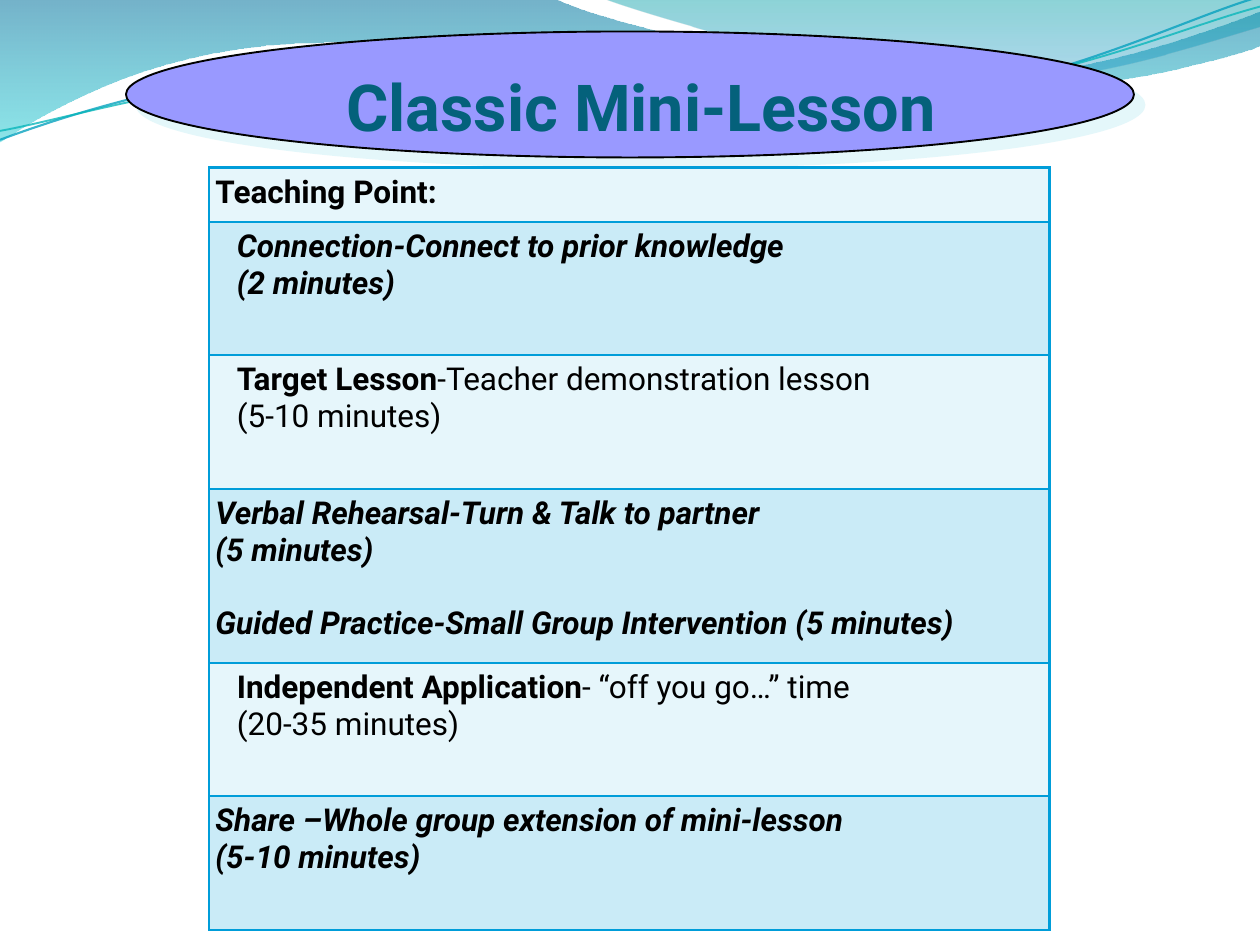
from typing import NamedTuple

from pptx import Presentation
from pptx.dml.color import RGBColor
from pptx.enum.shapes import MSO_SHAPE as Preset
from pptx.enum.text import MSO_ANCHOR as Anchor
from pptx.oxml import parse_xml
from pptx.oxml.ns import nsdecls, qn
from pptx.util import Emu, Inches, Pt

# The slide is a grid of 10 columns by 7.5 rows of square cells
SLIDE_WIDTH, SLIDE_HEIGHT = Inches(10), Inches(7.5)
CELL = SLIDE_WIDTH // 10

FONT = "Roboto"
BLACK = RGBColor(0x00, 0x00, 0x00)
TITLE_TEAL = RGBColor(0x04, 0x61, 0x7B)
OVAL_VIOLET = RGBColor(0x99, 0x99, 0xFF)
SHADOW_AQUA = RGBColor(0xDB, 0xF5, 0xF9)
BORDER_BLUE = RGBColor(0x00, 0x9D, 0xD9)
ROW_FILLS = (RGBColor(0xE6, 0xF6, 0xFB), RGBColor(0xCA, 0xEB, 0xF7))
DEEP_BLUE = RGBColor(0x00, 0x73, 0x9E)
TURQUOISE = RGBColor(0x00, 0xC5, 0xCE)
SEA_GREEN = RGBColor(0x00, 0x9F, 0xA6)
SKY_BLUE = RGBColor(0x00, 0x8A, 0xBE)
STRAND_BLUE = RGBColor(0x05, 0xA0, 0xBE)
STRAND_GREEN = RGBColor(0x08, 0xB6, 0xBA)

Point = tuple[float, float]
Segments = tuple[tuple[Point, ...], ...]  # one point: line, three: curve


class Stop(NamedTuple):
    position: int
    color: RGBColor
    opacity: int


class Wave(NamedTuple):
    start: Point
    segments: Segments
    stops: tuple[Stop, ...]


class Strand(NamedTuple):
    start: Point
    segments: Segments
    color: RGBColor
    width: float


class Words(NamedTuple):
    text: str
    bold: bool = True
    italic: bool = False


class Step(NamedTuple):
    height: float
    lines: tuple[tuple[Words, ...], ...]
    indent: float = 0
    gap_before_last: float = 0


WAVES = (
    Wave((0, -0.01), (
        ((4.4, -0.01),),
        ((4.76, 0.17), (6.64, 0.63), (7.58, 0.63)),
        ((8.53, 0.63), (9.58, 0.26), (10, 0.09)),
        ((10.01, 0.36),),
        ((9.83, 0.44), (8.7, 0.76), (7.46, 0.75)),
        ((6.22, 0.75), (3.82, 0.28), (2.57, 0.34)),
        ((1.29, 0.35), (0.46, 0.83), (-0.01, 1.13)),
    ), (Stop(0, DEEP_BLUE, 55), Stop(100, TURQUOISE, 45))),
    Wave((4.79, -0.01), (
        ((5.09, 0.11), (6.82, 0.62), (7.69, 0.65)),
        ((8.56, 0.69), (9.61, 0.32), (10, 0.21)),
        ((10, 0),),
    ), (Stop(0, SEA_GREEN, 45), Stop(80, SKY_BLUE, 33), Stop(100, SKY_BLUE, 30))),
)
STRANDS = (
    Strand((0, 1.11), (
        ((0.48, 0.93), (1.58, 0.57), (2.77, 0.51)),
        ((3.96, 0.46), (5.93, 0.88), (7.13, 0.79)),
        ((8.33, 0.7), (9.39, 0.15), (9.98, -0.02)),
    ), STRAND_BLUE, 1.21),
    Strand((-0.01, 1.04), (
        ((0.47, 0.96), (1.63, 0.6), (2.83, 0.56)),
        ((4.02, 0.51), (5.98, 0.84), (7.17, 0.75)),
        ((8.37, 0.67), (9.42, 0.2), (10.01, 0.05)),
    ), STRAND_GREEN, 1.07),
)


def strong(text: str) -> tuple[Words, ...]:
    return (Words(text, italic=True),)


STEPS = (
    Step(0.43, ((Words("Teaching Point:"),),)),
    Step(1.06, (strong("Connection-Connect to prior knowledge"),
                strong("(2 minutes)")), indent=0.17),
    Step(1.06, ((Words("Target Lesson"), Words("-Teacher demonstration lesson", False)),
                (Words("(5-10 minutes)", False),)), indent=0.17),
    Step(1.38, (strong("Verbal Rehearsal-Turn & Talk to partner"),
                strong("(5 minutes)"),
                strong("Guided Practice-Small Group Intervention (5 minutes)")),
         gap_before_last=21),
    Step(1.06, ((Words("Independent Application"), Words("- “off you go…” time", False)),
                (Words("(20-35 minutes)", False),)), indent=0.17),
    Step(1.06, (strong("Share –Whole group extension of mini-lesson"),
                strong("(5-10 minutes)"))),
)


def cells(*lengths: float) -> list[Emu]:
    return [Emu(round(length * CELL)) for length in lengths]


def color_xml(color: RGBColor, opacity: int = 100) -> str:
    return f'<a:srgbClr val="{color}"><a:alpha val="{opacity * 1000}"/></a:srgbClr>'


def draw_outline(slide, part: Wave | Strand, close: bool):
    """Lay straight steps through all points, then bend each group of three."""
    points = [cells(*point) for segment in part.segments for point in segment]
    builder = slide.shapes.build_freeform(*cells(*part.start))
    builder.add_line_segments(points, close=close)
    shape = builder.convert_to_shape()
    shape.shadow.inherit = False
    lines = iter(shape._element.spPr.findall(".//" + qn("a:lnTo")))
    for segment in part.segments:
        group = [next(lines) for _ in segment]
        if len(group) == 3:
            curve = parse_xml(f'<a:cubicBezTo {nsdecls("a")}/>')
            group[0].addprevious(curve)
            for line in group:
                curve.append(line[0])
                line.getparent().remove(line)
    return shape


def draw_wave(slide, wave: Wave) -> None:
    shape = draw_outline(slide, wave, close=True)
    shape.line.fill.background()
    shape.fill.gradient()
    properties = shape._element.spPr
    stops = "".join(f'<a:gs pos="{stop.position * 1000}">'
                    f'{color_xml(stop.color, stop.opacity)}</a:gs>' for stop in wave.stops)
    properties.replace(properties.find(qn("a:gradFill")), parse_xml(
        f'<a:gradFill {nsdecls("a")} rotWithShape="1"><a:gsLst>{stops}</a:gsLst>'
        '<a:lin ang="5400000" scaled="0"/></a:gradFill>'))


def draw_strand(slide, strand: Strand) -> None:
    shape = draw_outline(slide, strand, close=False)
    shape.fill.background()
    shape.line.color.rgb, shape.line.width = strand.color, Pt(strand.width)
    color = shape.line._ln.find(".//" + qn("a:srgbClr"))
    color.append(parse_xml(f'<a:alpha {nsdecls("a")} val="78000"/>'))


def add_run(paragraph, words: Words, size: float, color: RGBColor) -> None:
    run = paragraph.add_run()
    run.text = words.text
    run.font.color.rgb = color
    formats = {"name": FONT, "size": Pt(size), "bold": words.bold, "italic": words.italic}
    for name, value in formats.items():
        setattr(run.font, name, value)


def draw_title(slide) -> None:
    oval = slide.shapes.add_shape(Preset.OVAL, *cells(1, 0.25, 8, 1))
    oval.shadow.inherit = False
    oval.fill.solid()
    oval.fill.fore_color.rgb = OVAL_VIOLET
    oval.line.color.rgb, oval.line.width = BLACK, Pt(1.07)
    oval._element.spPr.find(qn("a:effectLst")).append(parse_xml(
        f'<a:outerShdw {nsdecls("a")} dist="{Pt(8.5)}" dir="2700000" algn="ctr" '
        f'rotWithShape="0">{color_xml(SHADOW_AQUA, 75)}</a:outerShdw>'))

    frame = slide.shapes.add_textbox(*cells(0.75, 0.42, 8.5, 0.73)).text_frame
    formats = {"word_wrap": True, "vertical_anchor": Anchor.BOTTOM, "margin_left": 0,
               "margin_right": 0, "margin_top": Inches(0.06), "margin_bottom": 0}
    for name, value in formats.items():
        setattr(frame, name, value)
    paragraph = frame.paragraphs[0]
    paragraph._p.get_or_add_pPr().set("marL", str(cells(2)[0]))
    add_run(paragraph, Words("Classic Mini-Lesson"), 37, TITLE_TEAL)


def fill_cell(cell, step: Step, color: RGBColor) -> None:
    for side in ("left", "right", "top", "bottom"):
        setattr(cell, f"margin_{side}", Inches(0.05))
    frame = cell.text_frame
    for index, line in enumerate(step.lines):
        paragraph = frame.add_paragraph() if index else frame.paragraphs[0]
        paragraph._p.get_or_add_pPr().set("marL", str(cells(step.indent)[0]))
        for words in line:
            add_run(paragraph, words, 18, BLACK)
    if step.gap_before_last:
        paragraph.space_before = Pt(step.gap_before_last)
    # Borders come before the fill in the cell properties
    properties = cell._tc.get_or_add_tcPr()
    for edge in ("lnL", "lnR", "lnT", "lnB"):
        properties.append(parse_xml(
            f'<a:{edge} {nsdecls("a")} w="{Pt(1.42)}"><a:solidFill>'
            f'{color_xml(BORDER_BLUE)}</a:solidFill></a:{edge}>'))
    cell.fill.solid()
    cell.fill.fore_color.rgb = color


def draw_lesson_table(slide) -> None:
    total = sum(step.height for step in STEPS)
    table = slide.shapes.add_table(len(STEPS), 1, *cells(1.66, 1.33, 6.67, total)).table
    table.first_row = table.horz_banding = False
    for index, step in enumerate(STEPS):
        table.rows[index].height = cells(step.height)[0]
        fill_cell(table.cell(index, 0), step, ROW_FILLS[index % 2])


def main() -> None:
    presentation = Presentation()
    presentation.slide_width, presentation.slide_height = SLIDE_WIDTH, SLIDE_HEIGHT
    slide = presentation.slides.add_slide(presentation.slide_layouts[6])
    for wave in WAVES:
        draw_wave(slide, wave)
    for strand in STRANDS:
        draw_strand(slide, strand)
    draw_title(slide)
    draw_lesson_table(slide)
    presentation.save("out.pptx")


if __name__ == "__main__":
    main()
